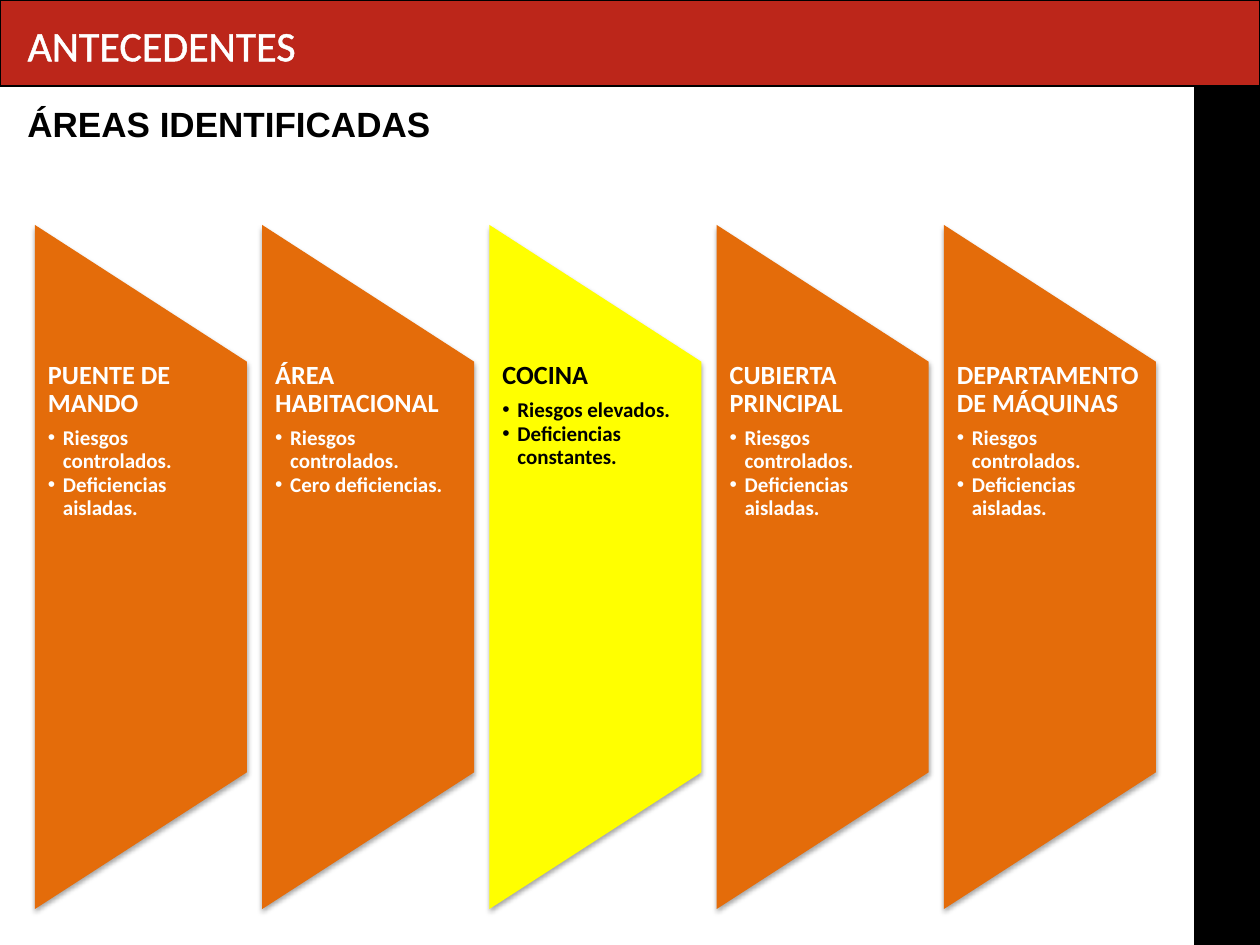
import lxml.etree
import pptx
import pptx.dml.color
import pptx.enum.shapes
import pptx.enum.text
import pptx.oxml.ns
import pptx.util

RGBColor = pptx.dml.color.RGBColor
SHAPES = pptx.enum.shapes.MSO_SHAPE
ALIGN = pptx.enum.text.PP_ALIGN
ANCHOR = pptx.enum.text.MSO_ANCHOR
AUTO_SIZE = pptx.enum.text.MSO_AUTO_SIZE

BLACK = RGBColor(0x00, 0x00, 0x00)
WHITE = RGBColor(0xFF, 0xFF, 0xFF)
RED = RGBColor(0xBC, 0x26, 0x1A)
ORANGE = RGBColor(0xE4, 0x6C, 0x0A)
YELLOW = RGBColor(0xFF, 0xFF, 0x00)

PX_PER_INCH = 126
PANEL_LEFT, PANEL_LAST_LEFT = 35, 944
PANEL_TOP, PANEL_WIDTH, PANEL_HEIGHT = 225, 212, 684
BULLET_INDENT = 15

AREAS = [
    ("PUENTE DE MANDO", ["Riesgos controlados.", "Deficiencias aisladas."], ORANGE, WHITE),
    ("ÁREA HABITACIONAL", ["Riesgos controlados.", "Cero deficiencias."], ORANGE, WHITE),
    ("COCINA", ["Riesgos elevados.", "Deficiencias constantes."], YELLOW, BLACK),
    ("CUBIERTA PRINCIPAL", ["Riesgos controlados.", "Deficiencias aisladas."], ORANGE, WHITE),
    ("DEPARTAMENTO DE MÁQUINAS", ["Riesgos controlados.", "Deficiencias aisladas."], ORANGE, WHITE),
]


def px(length):
    return pptx.util.Emu(round(length * 914400 / PX_PER_INCH))


def box(*lengths):
    return [px(length) for length in lengths]


def set_values(target, values):
    for name, value in values.items():
        setattr(target, name, value)


def add_xml(parent, tag, **attributes):
    return lxml.etree.SubElement(parent, pptx.oxml.ns.qn(tag), attributes)


def add_run(paragraph, text, color, size, name="Calibri", bold=True):
    run = paragraph.add_run()
    run.text = text
    set_values(run.font, {"name": name, "size": pptx.util.Pt(size), "bold": bold})
    run.font.color.rgb = color
    return run


def add_bar(slide, frame, color):
    bar = slide.shapes.add_shape(SHAPES.RECTANGLE, *box(*frame))
    bar.shadow.inherit = False
    bar.fill.solid()
    bar.fill.fore_color.rgb = color
    bar.line.color.rgb = BLACK
    bar.line.width = pptx.util.Pt(0.75)
    return bar


def format_title(slide, bar_below):
    title = slide.shapes.title
    left, top, width, height = box(15, 13, 674, 63)
    set_values(title, {"left": left, "top": top, "width": width, "height": height})
    set_values(title.text_frame, {"word_wrap": True, "vertical_anchor": ANCHOR.TOP,
                                  "auto_size": AUTO_SIZE.SHAPE_TO_FIT_TEXT})
    paragraph = title.text_frame.paragraphs[0]
    paragraph.alignment = ALIGN.LEFT
    run = add_run(paragraph, "ANTECEDENTES", WHITE, 24, bold=False)
    properties = run.font.fill._xPr
    outline = add_xml(properties, "a:ln", w=str(pptx.util.Pt(1.45)))
    add_xml(add_xml(outline, "a:solidFill"), "a:srgbClr", val=str(WHITE))
    properties.insert(0, outline)
    bar_below.element.addnext(title.element)


def add_subtitle(slide):
    subtitle = slide.shapes.add_textbox(*box(15, 96, 635, 55))
    set_values(subtitle.text_frame, {"word_wrap": True,
                                     "auto_size": AUTO_SIZE.SHAPE_TO_FIT_TEXT})
    paragraph = subtitle.text_frame.paragraphs[0]
    paragraph.alignment = ALIGN.JUSTIFY
    add_run(paragraph, "ÁREAS IDENTIFICADAS", BLACK, 20, name="Arial")


def add_panel(slide, left, color):
    """Add a trapezoid turned on its side, with a soft shadow below."""
    shift = (PANEL_HEIGHT - PANEL_WIDTH) / 2
    panel = slide.shapes.add_shape(
        SHAPES.FLOWCHART_MANUAL_OPERATION,
        *box(left - shift, PANEL_TOP + shift, PANEL_HEIGHT, PANEL_WIDTH))
    panel.rotation = 270
    panel.fill.solid()
    panel.fill.fore_color.rgb = color
    panel.line.fill.background()
    panel.shadow.inherit = False
    effects = panel.element.spPr.find(pptx.oxml.ns.qn("a:effectLst"))
    shadow = add_xml(effects, "a:outerShdw", blurRad=str(pptx.util.Pt(3.1)),
                     dist=str(pptx.util.Pt(1.8)), dir="5400000", rotWithShape="0")
    shadow_color = add_xml(shadow, "a:srgbClr", val=str(BLACK))
    add_xml(shadow_color, "a:alpha", val="35000")


def add_bullet(paragraph):
    paragraph.level = 1
    properties = paragraph._p.get_or_add_pPr()
    properties.set("marL", str(px(BULLET_INDENT)))
    properties.set("indent", str(px(-BULLET_INDENT)))
    add_xml(properties, "a:buFont", typeface="Arial")
    add_xml(properties, "a:buChar", char="•")


def add_panel_text(slide, left, heading, findings, color):
    text_box = slide.shapes.add_textbox(
        *box(left, PANEL_TOP + PANEL_HEIGHT / 5, PANEL_WIDTH, PANEL_HEIGHT * 3 / 5))
    frame = text_box.text_frame
    set_values(frame, {"word_wrap": True, "margin_left": px(13), "margin_right": px(14),
                       "margin_top": 0, "margin_bottom": 0})
    paragraph = frame.paragraphs[0]
    set_values(paragraph, {"line_spacing": 0.9, "space_after": pptx.util.Pt(5)})
    add_run(paragraph, heading, color, 15)
    for finding in findings:
        paragraph = frame.add_paragraph()
        add_bullet(paragraph)
        set_values(paragraph, {"line_spacing": 0.9, "space_after": pptx.util.Pt(1)})
        add_run(paragraph, finding, color, 12)


def main():
    presentation = pptx.Presentation()
    set_values(presentation, {"slide_width": px(1260), "slide_height": px(945)})
    slide = presentation.slides.add_slide(presentation.slide_layouts.get_by_name("Title Only"))
    add_bar(slide, (1195, 86, 65, 859), BLACK)
    header = add_bar(slide, (0, 0, 1260, 86), RED)
    format_title(slide, header)
    add_subtitle(slide)
    pitch = (PANEL_LAST_LEFT - PANEL_LEFT) / (len(AREAS) - 1)
    for index, (heading, findings, fill_color, text_color) in enumerate(AREAS):
        left = PANEL_LEFT + index * pitch
        add_panel(slide, left, fill_color)
        add_panel_text(slide, left, heading, findings, text_color)
    presentation.save("out.pptx")


if __name__ == "__main__":
    main()
